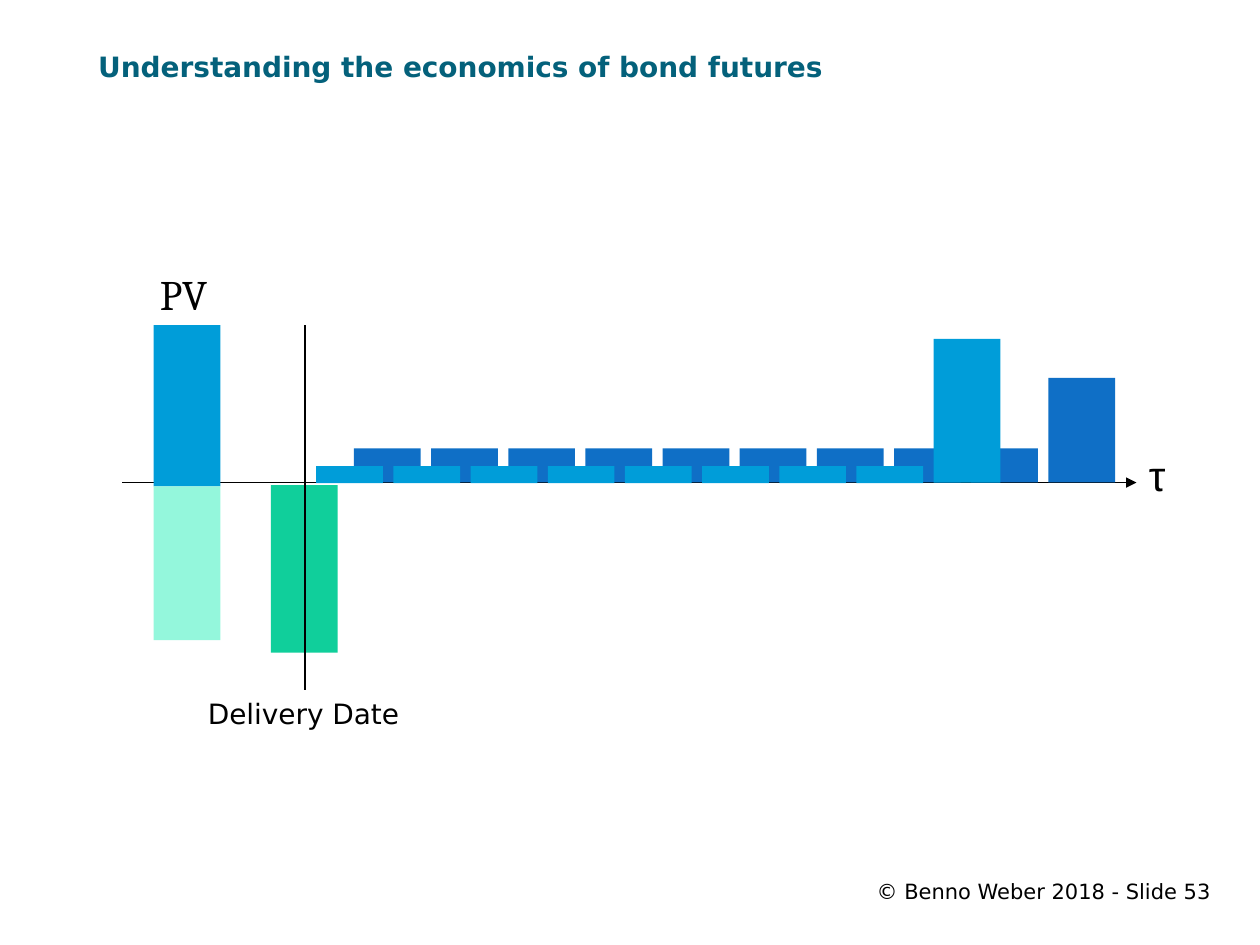
from dataclasses import dataclass

from lxml import etree
from pptx import Presentation
from pptx.dml.color import RGBColor
from pptx.enum.shapes import MSO_CONNECTOR, MSO_SHAPE
from pptx.enum.text import PP_ALIGN
from pptx.oxml.ns import qn
from pptx.util import Inches, Pt

LEFT, CENTER, RIGHT = PP_ALIGN.LEFT, PP_ALIGN.CENTER, PP_ALIGN.RIGHT
STRAIGHT, RECTANGLE = MSO_CONNECTOR.STRAIGHT, MSO_SHAPE.RECTANGLE

SLIDE_W, SLIDE_H = Inches(10), Inches(7.5)
UNIT = SLIDE_W / 100  # square grid: 100 columns by 75 rows

BLACK, TITLE = "000000", "04617B"
DARK_BLUE, LIGHT_BLUE = "0F6FC6", "009DD9"
GREEN, PALE_GREEN = "10CF9B", "94F7DC"
SANS = "DejaVu Sans"

AXIS_ROW = 38.3
BAR_COLS = 5.3
DELIVERY_COL = 24.2


@dataclass(frozen=True)
class Label:
    text: str
    col: float
    row: float
    cols: float
    rows: float
    size: int
    font: str = SANS
    color: str = BLACK
    align: PP_ALIGN = LEFT
    bold: bool = False
    wrap: bool = True
    inset: tuple[float, float] = (1, 0.5)


@dataclass(frozen=True)
class Bond:
    first_col: float
    redemption_col: float
    redemption_top: float
    coupon_top: float
    coupon_rows: float
    coupons: int
    color: str


LABELS = [
    Label("© Benno Weber 2018 - Slide 53", 54.5, 68.9, 42.4, 3.6, 12,
          align=RIGHT, inset=(0.8, 0.8)),
    Label("Understanding the economics of bond futures", 7, 3.1, 89.3, 4.6, 16,
          color=TITLE, bold=True, inset=(0.8, 0.8)),
    Label("τ", 90.2, 35.2, 2.9, 5, 24, font="Arial"),
    Label("PV", 11.7, 20.8, 6.3, 5, 24, font="Cambria", wrap=False),
    Label("Delivery Date", 15.3, 54.8, 17.6, 3.7, 16, align=CENTER),
]
LONG_BOND = Bond(28.1, 83.2, 30, 35.6, 2.7, 9, DARK_BLUE)
SHORT_BOND = Bond(25.1, 74.1, 26.9, 37, 1.35, 8, LIGHT_BLUE)


def grid(*cells: float) -> list[int]:
    return [round(cell * UNIT) for cell in cells]


def rgb(color: str) -> RGBColor:
    return RGBColor.from_string(color)


def add_label(s, label: Label) -> None:
    box = s.shapes.add_textbox(*grid(label.col, label.row, label.cols, label.rows))
    tf = box.text_frame
    tf.word_wrap = label.wrap
    tf.margin_left, tf.margin_top = grid(*label.inset)
    tf.margin_right, tf.margin_bottom = grid(*label.inset)
    tf.text = label.text
    p = tf.paragraphs[0]
    p.alignment = label.align
    font = p.runs[0].font
    font.name, font.size, font.bold = label.font, Pt(label.size), label.bold
    font.color.rgb = rgb(label.color)


def add_bar(s, col: float, row: float, rows: float, color: str) -> None:
    sp = s.shapes.add_shape(RECTANGLE, *grid(col, row, BAR_COLS, rows))
    sp.shadow.inherit = False
    sp.fill.solid()
    sp.fill.fore_color.rgb = rgb(color)
    sp.line.fill.background()


def add_bond(s, bond: Bond) -> None:
    """Draw equally spaced coupons, then the redemption one period later."""
    period = (bond.redemption_col - bond.first_col) / bond.coupons
    for i in range(bond.coupons):
        add_bar(s, bond.first_col + i * period, bond.coupon_top,
                bond.coupon_rows, bond.color)
    add_bar(s, bond.redemption_col, bond.redemption_top,
            AXIS_ROW - bond.redemption_top, bond.color)


def add_line(s, x1: float, y1: float, x2: float, y2: float,
             arrow: bool = False) -> None:
    line = s.shapes.add_connector(STRAIGHT, *grid(x1, y1, x2, y2))
    line.line.color.rgb = rgb(BLACK)
    line.line.width = Pt(0.75)
    if arrow:
        etree.SubElement(line.line._get_or_add_ln(), qn("a:tailEnd"), type="triangle")
    etree.SubElement(line._element.spPr, qn("a:effectLst"))


def main() -> None:
    prs = Presentation()
    prs.slide_width, prs.slide_height = SLIDE_W, SLIDE_H
    s = prs.slides.add_slide(prs.slide_layouts[6])

    add_line(s, 9.7, AXIS_ROW, 90.2, AXIS_ROW, arrow=True)
    add_bond(s, LONG_BOND)
    add_bar(s, 21.5, 38.5, 13.3, GREEN)
    add_bar(s, 12.2, 25.8, 12.8, LIGHT_BLUE)
    add_bar(s, 12.2, 38.6, 12.2, PALE_GREEN)
    add_line(s, DELIVERY_COL, 25.8, DELIVERY_COL, 54.8)
    add_bond(s, SHORT_BOND)
    for label in LABELS:
        add_label(s, label)

    prs.save("out.pptx")


if __name__ == "__main__":
    main()
